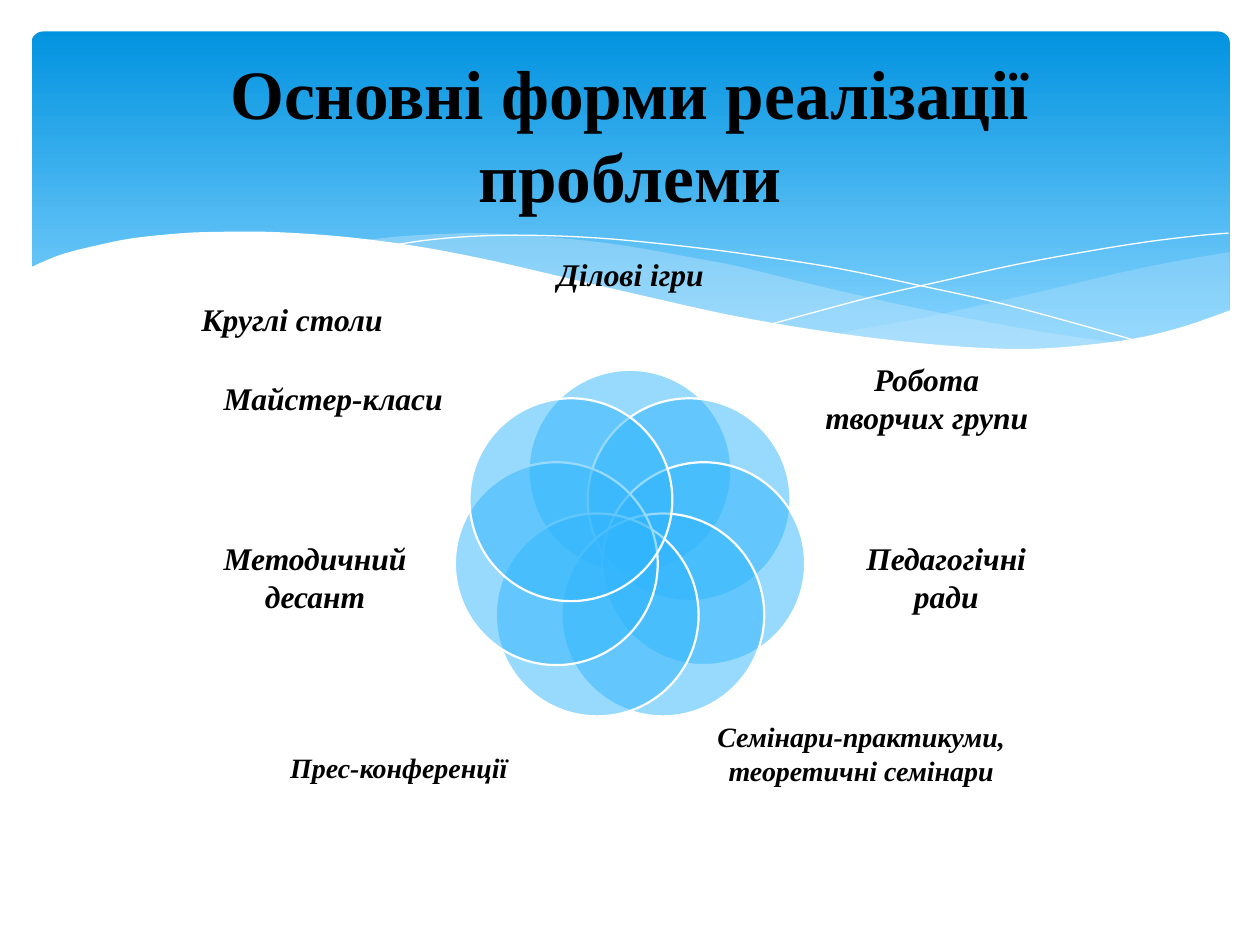
from dataclasses import dataclass
from math import cos, pi, sin

from lxml.etree import SubElement
from pptx import Presentation
from pptx.dml.color import RGBColor
from pptx.enum.shapes import MSO_SHAPE as Shape
from pptx.enum.text import MSO_ANCHOR as Anchor, PP_ALIGN as Align
from pptx.oxml.ns import qn
from pptx.util import Inches, Pt

WHITE, BLACK, PETAL_BLUE, PALE_BLUE = "FFFFFF", "000000", "31B6FD", "C6E7FC"
Point = tuple[float, float]
LABEL_FONT = {"name": "Times New Roman", "bold": True, "italic": True}
TITLE_FONT = {"name": "Times New Roman", "bold": True, "size": Pt(39.6)}
NO_INSETS = {"margin_left": 0, "margin_right": 0, "margin_top": 0, "margin_bottom": 0}


@dataclass
class Label:
    lines: tuple[str, ...]
    left: float
    top: float
    width: float
    height: float
    size: float = 18


@dataclass
class Wave:
    """Band or thread made of smooth edges; no fill means an open thread."""
    edges: tuple[tuple[Point, ...], ...]
    fill: str | None = None
    opacity: int = 100


FORMS = (
    Label(("Ділові ігри",), 4.06, 1.83, 1.89, 0.68),
    Label(("Робота творчих групи",), 6.48, 2.61, 1.75, 1.09),
    Label(("Педагогічні ради",), 6.65, 4, 1.72, 1.16),
    Label(("Семінари-практикуми,", "теоретичні семінари"), 5.36, 5.56, 2.95, 0.84, 16),
    Label(("Прес-конференції",), 2.24, 5.56, 1.85, 1.06, 16),
    Label(("Методичний десант",), 1.64, 4, 1.72, 1.16),
    Label(("Майстер-класи",), 1.77, 2.81, 1.75, 0.7),
)
ROUND_TABLES = Label(("Круглі столи",), 1.5, 2.33, 1.81, 0.4)
TITLE = Label(("Основні форми реалізації проблеми",), 0.5, 0.37, 9, 1.37)

WAVES = (
    Wave((
        ((9.76, 2), (9.35, 2.07), (8.91, 2.16), (8.32, 2.3), (7.79, 2.42), (7.29, 2.53), (6.61, 2.65)),
        ((6.61, 2.65), (7.05, 2.71), (7.45, 2.75), (7.81, 2.77), (8.14, 2.78), (8.44, 2.77),
         (8.81, 2.73), (9.13, 2.67), (9.42, 2.59), (9.76, 2.47)),
    ), PALE_BLUE, 29),
    Wave((
        ((8.93, 2.73), (8.37, 2.65), (7.75, 2.54), (7.06, 2.4), (6.29, 2.22), (5.84, 2.11),
         (5.41, 2.03), (5.02, 1.96), (4.65, 1.91), (4.2, 1.87), (3.8, 1.85), (3.44, 1.86),
         (3.13, 1.88), (2.86, 1.91)),
        ((2.86, 1.91), (3.42, 1.99), (4.04, 2.11), (4.49, 2.22), (5.3, 2.4), (6.01, 2.55),
         (6.5, 2.64), (6.95, 2.7), (7.36, 2.75), (7.73, 2.77), (8.07, 2.78), (8.48, 2.77), (8.93, 2.73)),
    ), PALE_BLUE, 40),
    Wave((
        ((3.09, 1.95), (3.44, 1.9), (3.87, 1.87), (4.33, 1.87), (4.89, 1.9), (5.56, 1.97),
         (6.08, 2.04), (6.65, 2.13), (7.27, 2.26), (7.95, 2.41), (8.69, 2.61), (9.07, 2.72)),
    )),
    Wave((
        ((6.13, 2.57), (6.53, 2.46), (6.95, 2.35), (7.48, 2.23), (8.06, 2.1), (8.66, 1.99),
         (9.1, 1.92), (9.51, 1.87), (9.75, 1.85)),
    )),
    Wave((
        ((9.77, 2.46), (9.4, 2.59), (8.99, 2.69), (8.5, 2.75), (8.09, 2.77), (7.61, 2.75),
         (7.08, 2.7), (6.48, 2.62), (5.79, 2.5), (5.03, 2.33), (4.47, 2.2), (3.91, 2.07),
         (3.4, 1.97), (2.92, 1.9), (2.5, 1.86), (2.11, 1.84), (1.77, 1.84), (1.46, 1.85),
         (1.06, 1.89), (0.76, 1.95), (0.52, 2.01), (0.36, 2.07), (0.23, 2.13)),
        ((0.23, 3.29), (9.77, 3.29)),
    ), WHITE),
)


def rgb(value: str) -> RGBColor:
    return RGBColor.from_string(value)


def apply(target, values: dict) -> None:
    for name, value in values.items():
        setattr(target, name, value)


def paint(shape, fill: str, opacity: int = 100) -> None:
    shape.fill.solid()
    shape.fill.fore_color.rgb = rgb(fill)
    if opacity < 100:
        color = shape.fill._xPr.find(qn("a:solidFill"))[0]
        SubElement(color, qn("a:alpha"), val=str(opacity * 1000))


def outline(shape, width: float) -> None:
    shape.line.color.rgb = rgb(WHITE)
    shape.line.width = Pt(width)


def smooth(edge: tuple[Point, ...], steps: int = 4) -> list[Point]:
    """Run a Catmull-Rom curve through the points of an edge."""
    padded = (edge[0], *edge, edge[-1])
    curve = [edge[0]]
    for a, b, c, d in zip(padded, padded[1:], padded[2:], padded[3:]):
        for t in (step / steps for step in range(1, steps + 1)):
            curve.append(tuple(
                q + (t * (r - p) + t**2 * (2 * p - 5 * q + 4 * r - s)
                     + t**3 * (3 * q - p - 3 * r + s)) / 2
                for p, q, r, s in zip(a, b, c, d)))
    return curve


def draw_wave(shapes, wave: Wave) -> None:
    start, *rest = [(Inches(x), Inches(y)) for edge in wave.edges for x, y in smooth(edge)]
    builder = shapes.build_freeform(*start)
    builder.add_line_segments(rest, close=wave.fill is not None)
    shape = builder.convert_to_shape()
    shape.shadow.inherit = False
    if wave.fill:
        paint(shape, wave.fill, wave.opacity)
        shape.line.fill.background()
    else:
        shape.fill.background()
        outline(shape, 0)


def draw_banner(shapes) -> None:
    banner = shapes.add_shape(Shape.ROUNDED_RECTANGLE, Inches(0.25), Inches(0.25),
                              Inches(9.51), Inches(2.7))
    banner.adjustments[0] = 0.034
    banner.shadow.inherit = False
    banner.line.fill.background()
    banner.fill.gradient()
    banner.fill.gradient_angle = 270
    for stop, (position, color) in zip(banner.fill.gradient_stops,
                                       ((0, "0293E0"), (0.9, "83D3FE"))):
        stop.position = position
        stop.color.rgb = rgb(color)


def draw_petal(shapes, turn: float) -> None:
    """Place one circle of the flower, turned clockwise from the top."""
    diameter, orbit = 1.61, 0.6
    left = 5 + orbit * sin(turn) - diameter / 2
    top = 4.34 - orbit * cos(turn) - diameter / 2
    petal = shapes.add_shape(Shape.OVAL, Inches(left), Inches(top),
                             Inches(diameter), Inches(diameter))
    petal.shadow.inherit = False
    paint(petal, PETAL_BLUE, 50)
    outline(petal, 1.25)


def draw_label(shapes, label: Label, font: dict, frame_format: dict, align: Align) -> None:
    box = shapes.add_textbox(Inches(label.left), Inches(label.top),
                             Inches(label.width), Inches(label.height))
    frame = box.text_frame
    apply(frame, {"word_wrap": True, **frame_format})
    frame.text = "\n".join(label.lines)
    for paragraph in frame.paragraphs:
        paragraph.alignment = align
        apply(paragraph.runs[0].font, {"size": Pt(label.size), **font})
        paragraph.runs[0].font.color.rgb = rgb(BLACK)


def main() -> None:
    deck = Presentation()
    deck.slide_width, deck.slide_height = Inches(10), Inches(7.5)
    shapes = deck.slides.add_slide(deck.slide_layouts[6]).shapes

    draw_banner(shapes)
    for wave in WAVES:
        draw_wave(shapes, wave)
    middle = {"vertical_anchor": Anchor.MIDDLE}
    draw_label(shapes, TITLE, TITLE_FONT, middle, Align.CENTER)
    for index, form in enumerate(FORMS):
        draw_petal(shapes, 2 * pi * index / len(FORMS))
        draw_label(shapes, form, LABEL_FONT, {**middle, **NO_INSETS}, Align.CENTER)
    draw_label(shapes, ROUND_TABLES, LABEL_FONT, {}, Align.LEFT)
    deck.save("out.pptx")


if __name__ == "__main__":
    main()
